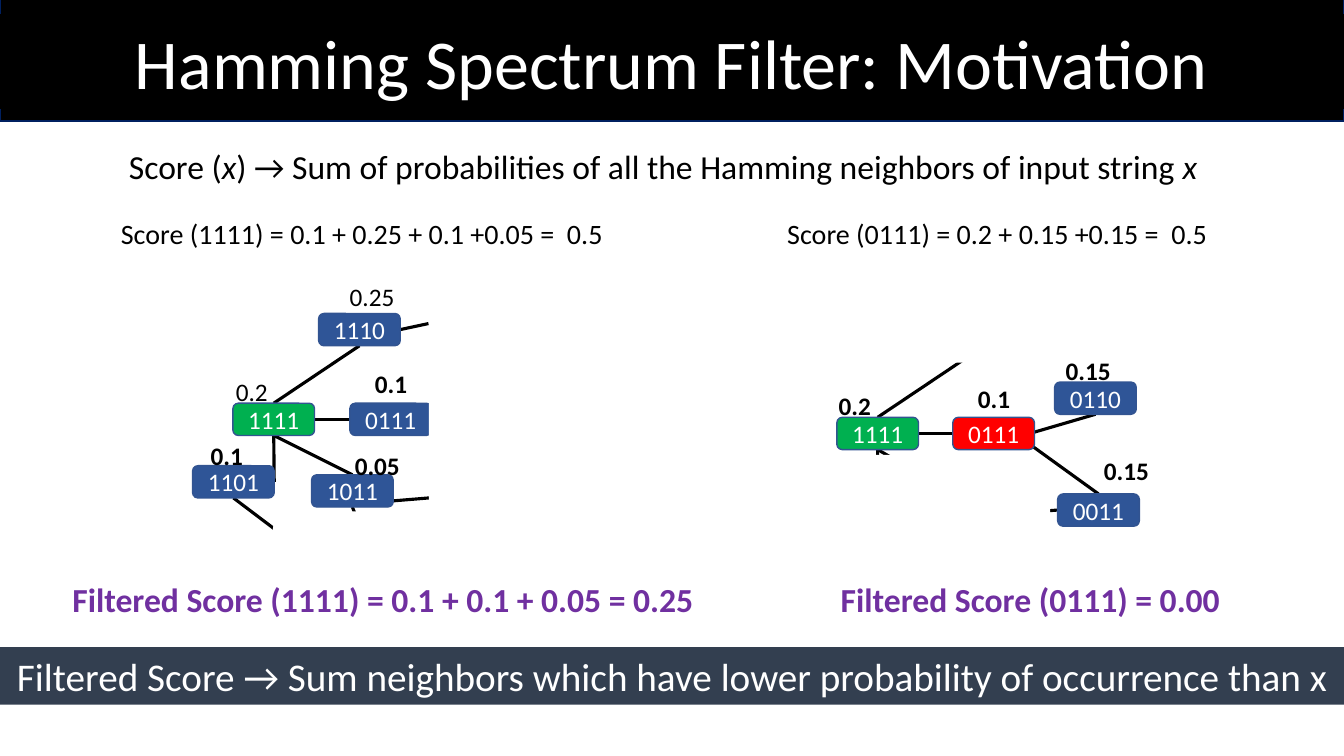
import pptx
import pptx.util
import pptx.dml.color
import pptx.enum.shapes
import pptx.enum.text
import pptx.oxml.ns
import lxml.etree

Inches = pptx.util.Inches
SHAPE = pptx.enum.shapes.MSO_SHAPE
FIT = pptx.enum.text.MSO_AUTO_SIZE

# Content
TITLE = "Hamming Spectrum Filter: Motivation"
DEFINITION = [("Score (", False), ("x", True),
              (") → Sum of probabilities of all the Hamming neighbors of input string ", False),
              ("x", True)]
SCORES = [("Score (1111) = 0.1 + 0.25 + 0.1 +0.05 =  0.5", (1.1, 2.1, 5.02, 0.44)),
          ("Score (0111) = 0.2 + 0.15 +0.15 =  0.5", (7.71, 2.1, 4.53, 0.44))]
FILTERED = [("Filtered Score (1111) = 0.1 + 0.1 + 0.05 = 0.25", (0.62, 5.69, 6.54, 0.5)),
            ("Filtered Score (0111) = 0.00", (8.24, 5.69, 4.15, 0.5))]
RULE = "Filtered Score → Sum neighbors which have lower probability of occurrence than x"

# Nodes: left, top, fill. Edge ends: (node, side) or a point.
# Labels: text, left, top, bold. Covers cut the graph down to the neighbors.
GRAPHS = [
    {"nodes": {"1111": (2.31, 4, "hub"), "0111": (3.47, 4, "node"),
               "1011": (3.09, 4.71, "node"), "1110": (3.16, 3.11, "node"),
               "1101": (1.91, 4.62, "node")},
     "edges": [(("1111", "right"), ("0111", "left")),
               (("1111", "bottom"), ("1011", "top")),
               (("1111", "bottom"), (2.72, 4.78)),
               (("1111", "top"), ("1110", "bottom")),
               (("1110", "right"), (4.25, 3.21)),
               ((3.89, 4.97), (4.5, 4.92)),
               (("1011", "bottom"), (3.7, 5.56)),
               (("1101", "bottom"), (3.36, 5.73))],
     "labels": [("0.2", 2.24, 3.68, False), ("0.1", 3.62, 3.61, True),
                ("0.25", 3.37, 2.74, False), ("0.05", 3.42, 4.42, True),
                ("0.1", 1.99, 4.32, True)],
     "covers": [(4.26, 2.46, 1.68, 3.27), (2.71, 5.08, 2.22, 1.17)]},
    {"nodes": {"1111": (8.3, 4.14, "hub"), "0111": (9.45, 4.14, "focus"),
               "0110": (10.46, 3.79, "node"), "0011": (10.49, 4.9, "node")},
     "edges": [(("1111", "right"), ("0111", "left")),
               (("1111", "bottom"), (9.46, 4.9)),
               (("1111", "bottom"), (8.7, 4.92)),
               (("1111", "top"), (9.54, 3.58)),
               (("0011", "left"), (9.87, 5.11)),
               (("0011", "top"), (10.23, 4.42)),
               (("0110", "bottom"), (10.25, 4.29))],
     "labels": [("0.2", 8.22, 3.82, True), ("0.1", 9.6, 3.75, True),
                ("0.15", 10.47, 3.48, True), ("0.15", 10.85, 4.47, True)],
     "covers": [(8.16, 2.89, 3.11, 0.7), (7.71, 4.52, 2.7, 1.7)]},
]

THEME = {
    "font": "Calibri",
    "color": {"hub": "00B050", "node": "2F5597", "focus": "FF0000", "outline": "325491",
              "ink": "000000", "paper": "FFFFFF", "accent": "7030A0",
              "band": "333F50", "bar_line": "002060"},
    "size": {"title": 50, "rule": 28, "lead": 24, "score": 20, "graph": 18},
}
SLIDE_W, SLIDE_H = 13.33, 7.5
NODE_W, NODE_H = 0.81, 0.32
SIDES = {"left": (0, 0.5), "right": (1, 0.5), "top": (0.5, 0), "bottom": (0.5, 1)}
CENTER = pptx.enum.text.PP_ALIGN.CENTER
MIDDLE = pptx.enum.text.MSO_ANCHOR.MIDDLE


def rgb(name):
    return pptx.dml.color.RGBColor.from_string(THEME["color"][name])


def write(sp, runs, size, color="ink", bold=False, align=None, **frame):
    tf = sp.text_frame
    for name, value in frame.items():
        setattr(tf, name, value)
    p = tf.paragraphs[0]
    if align is not None:
        p.alignment = align
    for text, italic in runs:
        r = p.add_run()
        r.text = text
        style = {"name": THEME["font"], "size": pptx.util.Pt(THEME["size"][size]),
                 "bold": bold, "italic": italic}
        for name, value in style.items():
            setattr(r.font, name, value)
        r.font.color.rgb = rgb(color)


def add_text(box, runs, size, **style):
    sp = slide.shapes.add_textbox(*map(Inches, box))
    write(sp, runs, size, word_wrap=False, auto_size=FIT.SHAPE_TO_FIT_TEXT, **style)


def add_box(kind, box, fill, line=None, width=1):
    sp = slide.shapes.add_shape(kind, *map(Inches, box))
    sp.shadow.inherit = False
    sp.fill.solid()
    sp.fill.fore_color.rgb = rgb(fill)
    if line:
        sp.line.color.rgb = rgb(line)
        sp.line.width = pptx.util.Pt(width)
    else:
        sp.line.fill.background()
    return sp


def locate(end, nodes):
    if end[0] not in nodes:
        return end
    left, top, _ = nodes[end[0]]
    fx, fy = SIDES[end[1]]
    return left + fx * NODE_W, top + fy * NODE_H


def add_edge(start, end):
    line = slide.shapes.add_connector(pptx.enum.shapes.MSO_CONNECTOR.STRAIGHT,
                                      *map(Inches, (*start, *end)))
    line.line.color.rgb = rgb("ink")
    line.line.width = pptx.util.Pt(2.25)
    lxml.etree.SubElement(line._element.spPr, pptx.oxml.ns.qn("a:effectLst"))


def add_graph(graph):
    nodes = graph["nodes"]
    for start, end in graph["edges"]:
        add_edge(locate(start, nodes), locate(end, nodes))
    for name, (left, top, fill) in nodes.items():
        sp = add_box(SHAPE.ROUNDED_RECTANGLE, (left, top, NODE_W, NODE_H), fill, "outline")
        write(sp, [(name, False)], "graph", "paper", align=CENTER, vertical_anchor=MIDDLE)
    for text, left, top, bold in graph["labels"]:
        width = 0.52 if len(text) == 3 else 0.65
        add_text((left, top, width, 0.4), [(text, False)], "graph", bold=bold)
    for box in graph["covers"]:
        add_box(SHAPE.ROUNDED_RECTANGLE, box, "paper", "paper")


prs = pptx.Presentation()
prs.slide_width, prs.slide_height = Inches(SLIDE_W), Inches(SLIDE_H)
slide = prs.slides.add_slide(prs.slide_layouts[5])

# Title bar, with the title placed in front of it
add_box(SHAPE.RECTANGLE, (0, -0.02, SLIDE_W, 1.22), "ink", "bar_line", 2)
title = slide.shapes.title
slide.shapes._spTree.append(title._element)
for name, value in zip(("left", "top", "width", "height"), (0, 0.14, SLIDE_W, 0.94)):
    setattr(title, name, Inches(value))
title.fill.solid()
title.fill.fore_color.rgb = rgb("ink")
write(title, [(TITLE, False)], "title", "paper", align=CENTER,
      vertical_anchor=MIDDLE, auto_size=FIT.NONE)

# Graphs
for graph in GRAPHS:
    add_graph(graph)

# Definition and scores
add_text((1.18, 1.4, 11.09, 0.5), DEFINITION, "lead")
for text, box in SCORES:
    add_text(box, [(text, False)], "score")
for text, box in FILTERED:
    add_text(box, [(text, False)], "lead", color="accent", bold=True)

# Rule band
band = add_box(SHAPE.RECTANGLE, (0, 6.42, SLIDE_W, 0.57), "band")
write(band, [(RULE, False)], "rule", "paper", align=CENTER, vertical_anchor=MIDDLE)

prs.save("out.pptx")
